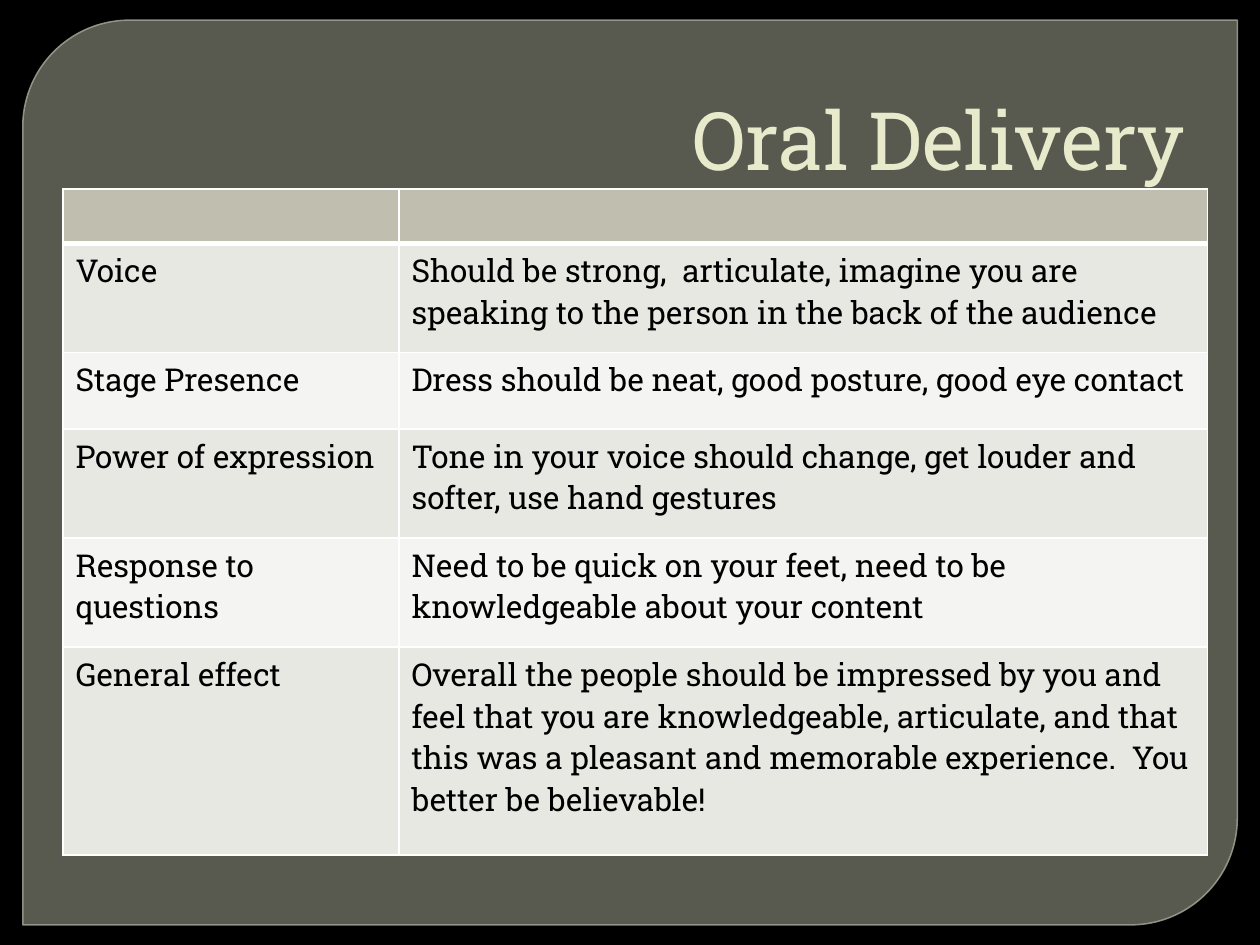
"""Build the Oral Delivery slide: a title above a table of criteria."""
from lxml import etree
from pptx import Presentation
from pptx.dml.color import RGBColor
from pptx.enum import shapes, text
from pptx.oxml.ns import qn
from pptx.util import Pt

TITLE = "Oral Delivery"
ROWS = [
    ("", "", 31),
    ("Voice", "Should be strong,  articulate, imagine you are speaking to the "
     "person in the back of the audience", 62.4),
    ("Stage Presence", "Dress should be neat, good posture, good eye contact", 43.7),
    ("Power of expression", "Tone in your voice should change, get louder and "
     "softer, use hand gestures", 62.4),
    ("Response to questions", "Need to be quick on your feet, need to be "
     "knowledgeable about your content", 62.4),
    ("General effect", "Overall the people should be impressed by you and feel "
     "that you are knowledgeable, articulate, and that this was a pleasant and "
     "memorable experience.  You better be believable!", 118.8),
]
COLUMNS = (192, 462)
TABLE_LEFT, TABLE_TOP = 36, 108

THEME = {
    "font": "Roboto Slab", "title_size": 46, "body_size": 18,
    "background": "000000", "panel": "888B7B", "panel_line": "9DA090",
    "title": "E7EACB", "body": "000000", "header": "C0BEAF",
    "bands": ("E8E8E3", "F4F4F2"), "border": "FFFFFF",
}


def rgb(name):
    return RGBColor.from_string(name)


def paint(fill, color, alpha=100):
    fill.solid()
    fill.fore_color.rgb = rgb(color)
    if alpha < 100:
        clr = next(fill._xPr.iter(qn("a:srgbClr")))
        etree.SubElement(clr, qn("a:alpha"), val=str(alpha * 1000))


def write(tf, content, size, color, align=text.PP_ALIGN.LEFT):
    tf.word_wrap = True
    p = tf.paragraphs[0]
    p.alignment = align
    if content:
        r = p.add_run()
        r.text = content
        r.font.name = THEME["font"]
        r.font.size = Pt(size)
        r.font.color.rgb = rgb(color)


def border(cell, **widths):
    tc_pr = cell._tc.get_or_add_tcPr()
    for side in "LRTB":
        ln = etree.SubElement(tc_pr, qn("a:ln" + side), w=str(Pt(widths.get(side, 1))))
        solid = etree.SubElement(ln, qn("a:solidFill"))
        etree.SubElement(solid, qn("a:srgbClr"), val=THEME["border"])


def add_panel(slide):
    sp = slide.shapes.add_shape(shapes.MSO_SHAPE.ROUND_2_DIAG_RECTANGLE,
                                Pt(13), Pt(11.5), Pt(694), Pt(517))
    sp.adjustments[0], sp.adjustments[1] = 0.118, 0
    sp.shadow.inherit = False
    paint(sp.fill, THEME["panel"], 65)
    paint(sp.line.fill, THEME["panel_line"], 88)
    sp.line.width = Pt(0.87)


def add_title(slide):
    tf = slide.shapes.add_textbox(Pt(36), Pt(20), Pt(648), Pt(90)).text_frame
    tf.vertical_anchor = text.MSO_ANCHOR.BOTTOM
    write(tf, TITLE, THEME["title_size"], THEME["title"], text.PP_ALIGN.RIGHT)


def add_criteria(slide):
    height = sum(row[-1] for row in ROWS)
    table = slide.shapes.add_table(len(ROWS), len(COLUMNS), Pt(TABLE_LEFT), Pt(TABLE_TOP),
                                   Pt(sum(COLUMNS)), Pt(height)).table
    table.first_row = table.horz_banding = False
    for column, width in zip(table.columns, COLUMNS):
        column.width = Pt(width)
    for i, (*contents, row_height) in enumerate(ROWS):
        table.rows[i].height = Pt(row_height)
        color = THEME["bands"][(i - 1) % 2] if i else THEME["header"]
        for j, content in enumerate(contents):
            cell = table.cell(i, j)
            border(cell, T=3 if i == 1 else 1, B=1 if i else 3)
            paint(cell.fill, color)
            write(cell.text_frame, content, THEME["body_size"], THEME["body"])


def main():
    prs = Presentation()
    prs.slide_width, prs.slide_height = Pt(720), Pt(540)
    slide = prs.slides.add_slide(prs.slide_layouts[6])
    paint(slide.background.fill, THEME["background"])
    add_panel(slide)
    add_title(slide)
    add_criteria(slide)
    prs.save("out.pptx")


if __name__ == "__main__":
    main()
